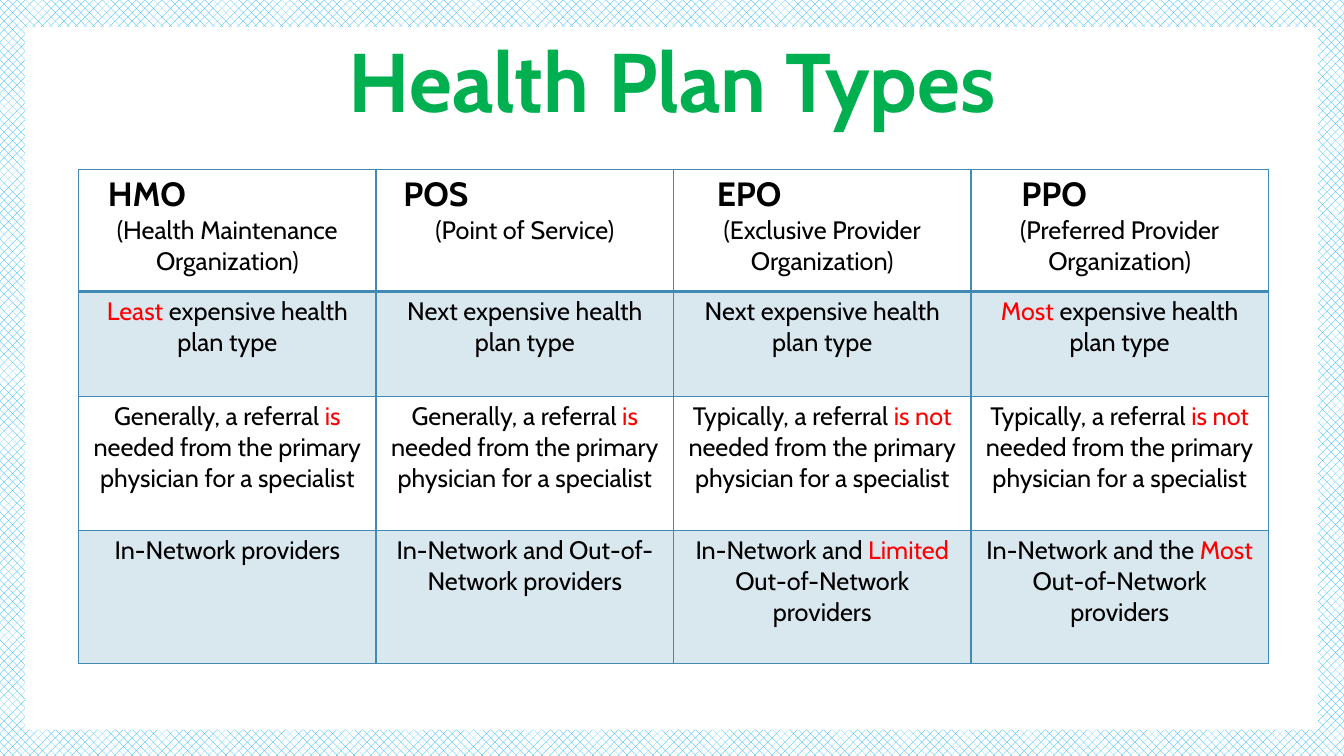
from lxml import etree
from pptx import Presentation
from pptx.dml.color import RGBColor
from pptx.enum import dml, shapes, text
from pptx.oxml.ns import qn
from pptx.util import Inches, Pt

FONT = "Cabin"
GREEN = RGBColor(0x00, 0xB0, 0x50)
CYAN = RGBColor(0x00, 0xB0, 0xF0)
BLUE = RGBColor(0x41, 0x8A, 0xB3)
RED = RGBColor(0xFF, 0x00, 0x00)
BLACK = RGBColor(0x00, 0x00, 0x00)
WHITE = RGBColor(0xFF, 0xFF, 0xFF)

# Short name, indent of the short name in inches, full name
PLANS = [
    ("HMO", 0.19, "(Health Maintenance Organization)"),
    ("POS", 0.17, "(Point of Service)"),
    ("EPO", 0.33, "(Exclusive Provider Organization)"),
    ("PPO", 0.4, "(Preferred Provider Organization)"),
]
NEXT_COST = "Next expensive health plan type"
REFERRAL = "Generally, a referral *is* needed from the primary physician for a specialist"
NO_REFERRAL = "Typically, a referral *is not* needed from the primary physician for a specialist"
# Words between asterisks are red
FEATURES = [
    ["*Least* expensive health plan type", NEXT_COST, NEXT_COST,
     "*Most* expensive health plan type"],
    [REFERRAL, REFERRAL, NO_REFERRAL, NO_REFERRAL],
    ["In-Network providers", "In-Network and Out-of-Network providers",
     "In-Network and *Limited* Out-of-Network providers",
     "In-Network and the *Most* Out-of-Network providers"],
]
ROW_HEIGHTS = [1.21, 1.04, 1.33, 1.32]
COLUMN_WIDTH = 2.95


def write(p, content, size=18, color=BLACK, bold=False, align=text.PP_ALIGN.CENTER):
    """Fill a paragraph, with the words between asterisks in red."""
    p.alignment = align
    for i, part in enumerate(content.split("*")):
        if part:
            r = p.add_run()
            r.text = part
            r.font.name = FONT
            r.font.size = Pt(size)
            r.font.bold = bold
            r.font.color.rgb = RED if i % 2 else color


def set_borders(cell, top=1, bottom=1):
    widths = {"a:lnL": 1, "a:lnR": 1, "a:lnT": top, "a:lnB": bottom}
    tc_pr = cell._tc.get_or_add_tcPr()
    for i, (tag, width) in enumerate(widths.items()):
        ln = etree.Element(qn(tag), w=str(Pt(width)))
        fill = etree.SubElement(ln, qn("a:solidFill"))
        etree.SubElement(fill, qn("a:srgbClr"), val=str(BLUE))
        tc_pr.insert(i, ln)


def set_tint(cell):
    """Fill a cell with blue at 20 % opacity."""
    cell.fill.solid()
    cell.fill.fore_color.rgb = BLUE
    color = cell._tc.tcPr.find(qn("a:solidFill")).find(qn("a:srgbClr"))
    etree.SubElement(color, qn("a:alpha"), val="20000")


def add_background(slide):
    fill = slide.background.fill
    fill.patterned()
    fill.pattern = dml.MSO_PATTERN.from_xml("pct40")
    fill.fore_color.rgb = CYAN
    fill.back_color.rgb = WHITE
    panel = slide.shapes.add_shape(shapes.MSO_SHAPE.RECTANGLE, Inches(0.25),
                                   Inches(0.27), Inches(12.82), Inches(6.97))
    panel.shadow.inherit = False
    panel.fill.solid()
    panel.fill.fore_color.rgb = WHITE
    panel.line.fill.background()
    slide.shapes._spTree.insert(2, panel._element)


def add_title(slide, content):
    title = slide.shapes.title
    title.left, title.top = Inches(0.27), Inches(0.32)
    title.width, title.height = Inches(12.79), Inches(1.05)
    tf = title.text_frame
    tf.auto_size = text.MSO_AUTO_SIZE.NONE
    tf.vertical_anchor = text.MSO_ANCHOR.MIDDLE
    tf.paragraphs[0].line_spacing = 0.9
    write(tf.paragraphs[0], content, size=59.4, color=GREEN, bold=True)


def fill_header(cell, short, indent, full):
    tf = cell.text_frame
    p = tf.paragraphs[0]
    write(p, short, size=24, bold=True, align=text.PP_ALIGN.LEFT)
    p._p.get_or_add_pPr().set("marL", str(Inches(indent)))
    write(tf.add_paragraph(), full)
    cell.fill.background()
    set_borders(cell, bottom=2)


def add_plan_table(slide):
    table = slide.shapes.add_table(
        len(ROW_HEIGHTS), len(PLANS), Inches(0.78), Inches(1.68),
        Inches(COLUMN_WIDTH * len(PLANS)), Inches(sum(ROW_HEIGHTS))).table
    for column in table.columns:
        column.width = Inches(COLUMN_WIDTH)
    for row, height in zip(table.rows, ROW_HEIGHTS):
        row.height = Inches(height)
    for c, plan in enumerate(PLANS):
        fill_header(table.cell(0, c), *plan)
    for r, features in enumerate(FEATURES, start=1):
        for c, feature in enumerate(features):
            cell = table.cell(r, c)
            write(cell.text_frame.paragraphs[0], feature)
            if r % 2:
                set_tint(cell)
            else:
                cell.fill.background()
            set_borders(cell, top=2 if r == 1 else 1)


def main():
    prs = Presentation()
    prs.slide_width, prs.slide_height = Inches(13.33), Inches(7.5)
    slide = prs.slides.add_slide(prs.slide_layouts[5])
    add_background(slide)
    add_title(slide, "Health Plan Types")
    add_plan_table(slide)
    prs.save("out.pptx")


if __name__ == "__main__":
    main()
